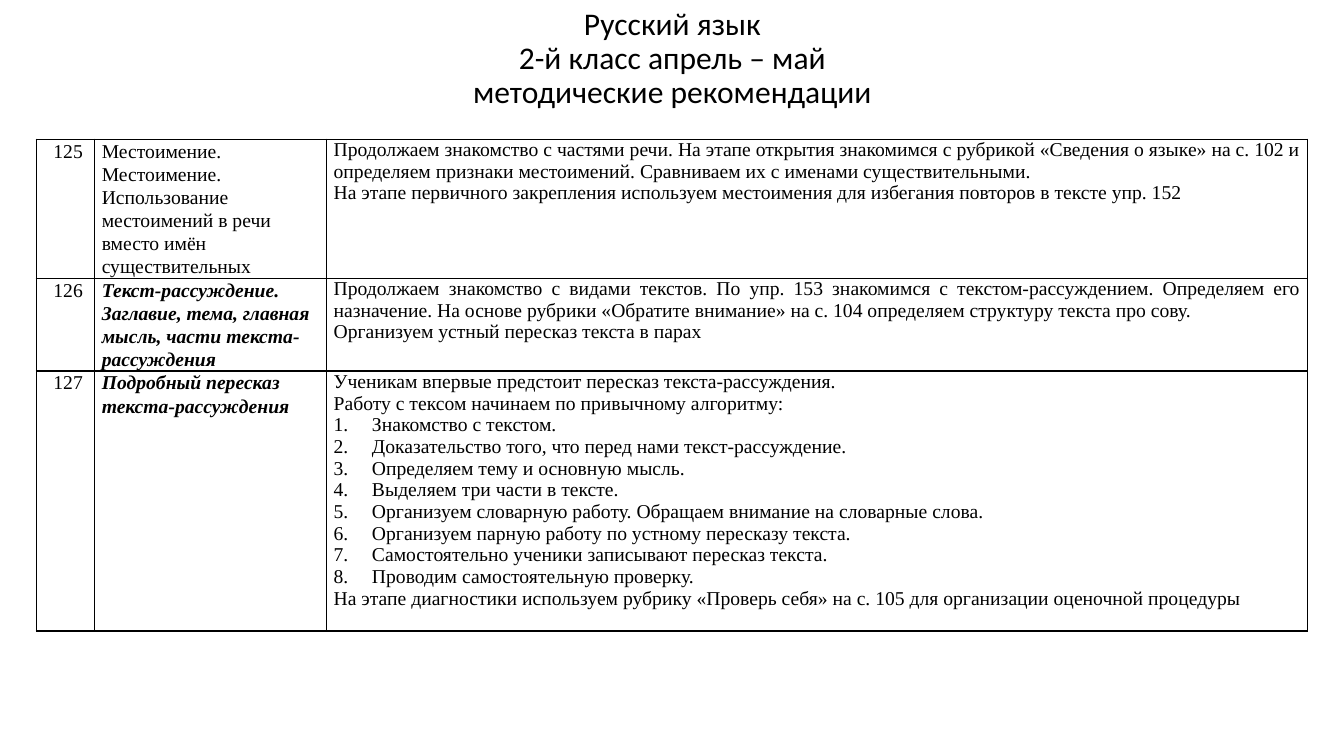
from lxml import etree
from pptx import Presentation
from pptx import util as u
from pptx.dml.color import RGBColor
from pptx.enum import text
from pptx.oxml import ns

TITLE = "Русский язык\v2-й класс апрель – май\vметодические рекомендации"
COLS = [0.58, 2.3, 9.73]
ROWS = [
    (1.38, "125",
     "Местоимение. Местоимение. Использование местоимений в речи вместо имён существительных",
     False,
     ["Продолжаем знакомство с частями речи. На этапе открытия знакомимся с рубрикой «Сведения о языке» на с. 102 и определяем признаки местоимений. Сравниваем их с именами существительными.",
      "На этапе первичного закрепления используем местоимения для избегания повторов в тексте упр. 152"]),
    (0.92, "126",
     "Текст-рассуждение. Заглавие, тема, главная мысль, части текста-рассуждения",
     True,
     ["Продолжаем знакомство с видами текстов. По упр. 153 знакомимся с текстом-рассуждением. Определяем его назначение. На основе рубрики «Обратите внимание» на с. 104 определяем структуру текста про сову.",
      "Организуем устный пересказ текста в парах"]),
    (2.58, "127", "Подробный пересказ текста-рассуждения", True,
     ["Ученикам впервые предстоит пересказ текста-рассуждения.",
      "Работу с тексом начинаем по привычному алгоритму:",
      ["Знакомство с текстом.",
       "Доказательство того, что перед нами текст-рассуждение.",
       "Определяем тему и основную мысль.",
       "Выделяем три части в тексте.",
       "Организуем словарную работу. Обращаем внимание на словарные слова.",
       "Организуем парную работу по устному пересказу текста.",
       "Самостоятельно ученики записывают пересказ текста.",
       "Проводим самостоятельную проверку."],
      "На этапе диагностики используем рубрику «Проверь себя» на с. 105 для организации оценочной процедуры"]),
]


def color(code):
    return RGBColor.from_string(code)


class Page:
    ink = "000000"
    head = "Calibri"
    body = "Times New Roman"
    size = 14

    def __init__(self, deck):
        self.slide = deck.slides.add_slide(deck.slide_layouts[5])

    def style(self, para, face, size, bold=False):
        font = para.font
        font.name, font.size = face, u.Pt(size)
        font.bold = font.italic = bold
        font.color.rgb = color(self.ink)

    def title(self, words, left, top, width, height):
        box = self.slide.shapes.title
        box.left, box.top = u.Inches(left), u.Inches(top)
        box.width, box.height = u.Inches(width), u.Inches(height)
        frame = box.text_frame
        frame.text = words
        frame.word_wrap = True
        frame.auto_size = text.MSO_AUTO_SIZE.NONE
        frame.vertical_anchor = text.MSO_ANCHOR.MIDDLE
        para = frame.paragraphs[0]
        para.alignment = text.PP_ALIGN.CENTER
        para.line_spacing = 0.9
        self.style(para, self.head, 22.5)

    def border(self, cell):
        props = cell._tc.get_or_add_tcPr()
        for spot, side in enumerate(("lnL", "lnR", "lnT", "lnB")):
            line = etree.Element(ns.qn("a:" + side), w=str(u.Pt(1)))
            fill = etree.SubElement(line, ns.qn("a:solidFill"))
            etree.SubElement(fill, ns.qn("a:srgbClr"), val=self.ink)
            props.insert(spot, line)

    def indent(self, para, left, first=0):
        props = para._p.get_or_add_pPr()
        props.set("marL", str(u.Inches(left)))
        props.set("indent", str(u.Inches(first)))
        return props

    def label(self, cell, words, bold=False, left=0):
        para = cell.text_frame.paragraphs[0]
        para.text = words
        para.line_spacing = 1.07
        para.space_after = u.Pt(8)
        self.indent(para, left)
        self.style(para, self.body, self.size, bold)

    def notes(self, cell, items):
        lines = []
        for item in items:
            listed = isinstance(item, list)
            lines += [(words, listed) for words in (item if listed else [item])]
        frame = cell.text_frame
        for num, (words, listed) in enumerate(lines):
            para = frame.add_paragraph() if num else frame.paragraphs[0]
            para.text = words
            para.alignment = text.PP_ALIGN.JUSTIFY
            if listed:
                props = self.indent(para, 0.38, -0.38)
                etree.SubElement(props, ns.qn("a:buAutoNum"), type="arabicPeriod")
            self.style(para, self.body, self.size)

    def table(self, rows, cols, left, top):
        width, height = sum(cols), sum(row[0] for row in rows)
        grid = self.slide.shapes.add_table(
            len(rows), len(cols), u.Inches(left), u.Inches(top),
            u.Inches(width), u.Inches(height)).table
        grid.first_row = grid.horz_banding = False
        for col, size in zip(grid.columns, cols):
            col.width = u.Inches(size)
        for cell in grid.iter_cells():
            cell.margin_left = cell.margin_right = u.Inches(0.07)
            cell.margin_top = cell.margin_bottom = 0
            cell.fill.background()
            self.border(cell)
        for row, (tall, num, theme, bold, items) in zip(grid.rows, rows):
            row.height = u.Inches(tall)
            first, second, third = row.cells
            self.label(first, num, left=0.1)
            self.label(second, theme, bold)
            self.notes(third, items)


def main():
    deck = Presentation()
    deck.slide_width, deck.slide_height = u.Inches(13.33), u.Inches(7.5)
    page = Page(deck)
    page.title(TITLE, 0.92, 0.08, 11.5, 1.02)
    page.table(ROWS, COLS, 0.36, 1.38)
    deck.save("out.pptx")


if __name__ == "__main__":
    main()
